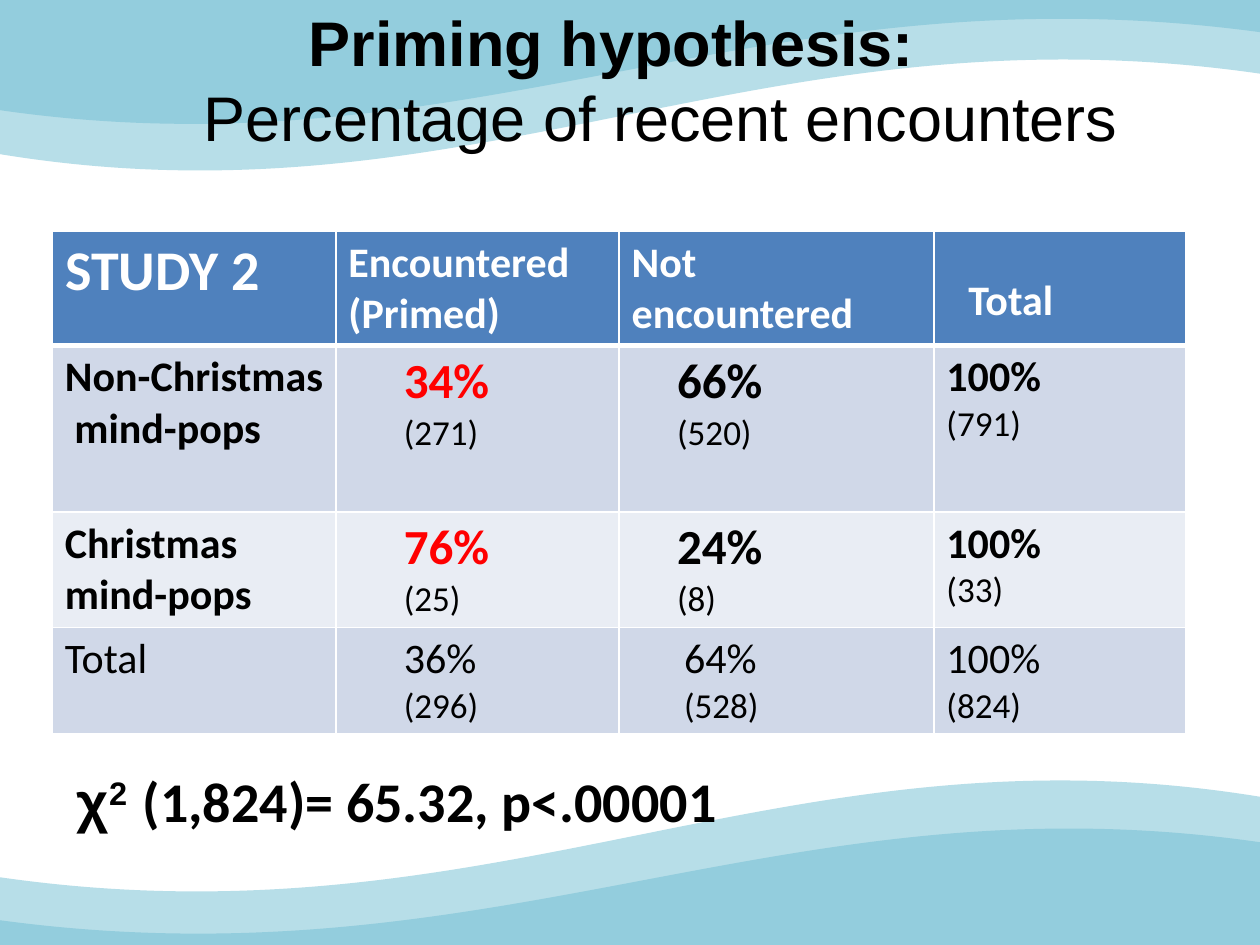
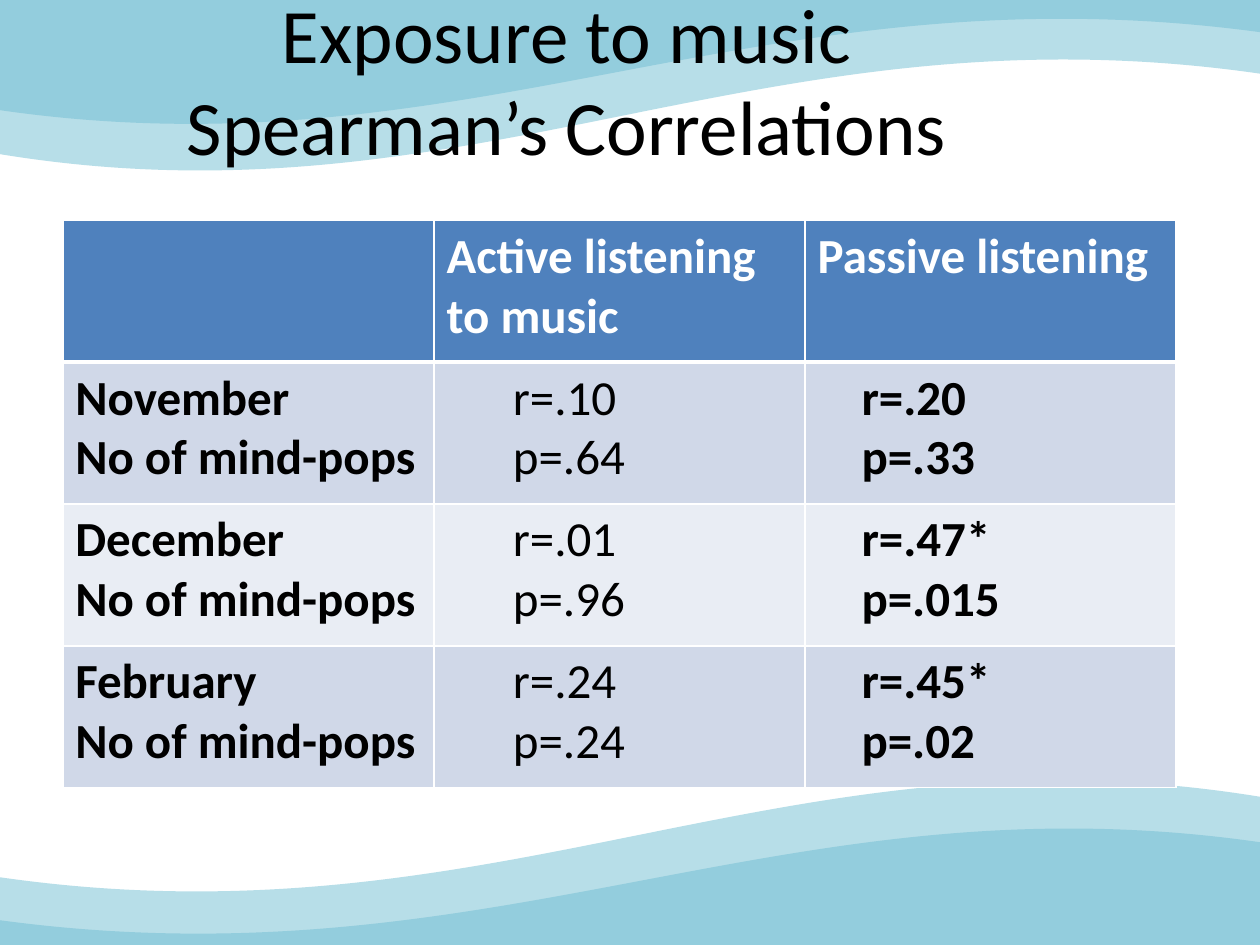
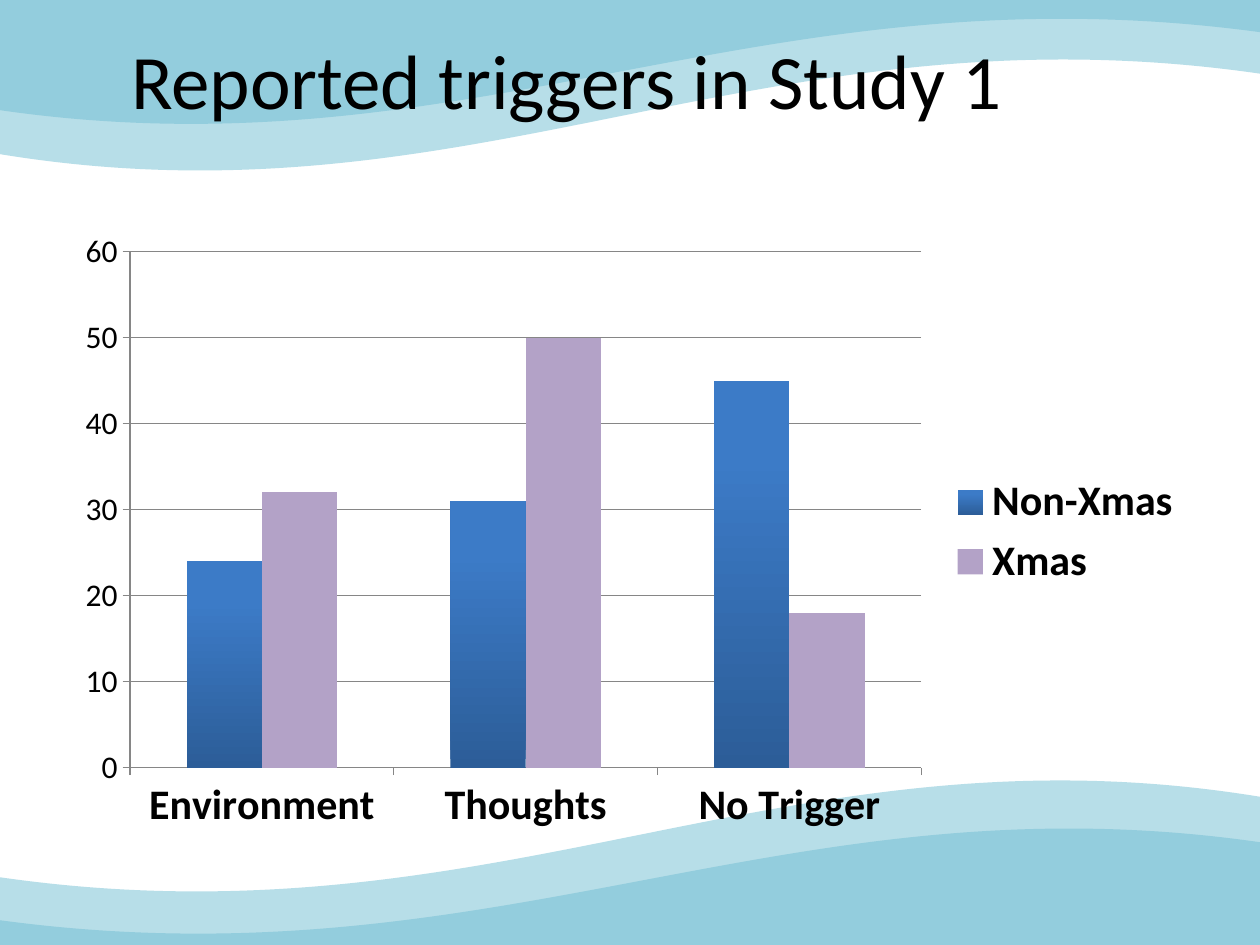
from lxml import etree
from pptx import Presentation
from pptx.chart.data import CategoryChartData
from pptx.dml.color import RGBColor
from pptx.enum.chart import XL_CHART_TYPE, XL_LEGEND_POSITION, XL_TICK_MARK
from pptx.enum.text import MSO_ANCHOR, PP_ALIGN
from pptx.oxml.ns import qn
from pptx.util import Cm, Pt

COLUMNS = XL_CHART_TYPE.COLUMN_CLUSTERED
LEGEND_RIGHT = XL_LEGEND_POSITION.RIGHT
TICK_OUTSIDE = XL_TICK_MARK.OUTSIDE
MIDDLE = MSO_ANCHOR.MIDDLE
CENTER, LEFT = PP_ALIGN.CENTER, PP_ALIGN.LEFT

BLACK = RGBColor(0x00, 0x00, 0x00)
WHITE = RGBColor(0xFF, 0xFF, 0xFF)
RED = RGBColor(0xFF, 0x00, 0x00)
LIGHT_WAVE = RGBColor(0xB7, 0xDE, 0xE8)
DARK_WAVE = RGBColor(0x93, 0xCD, 0xDD)
HEADER_BLUE = RGBColor(0x4F, 0x81, 0xBD)
BANDS = (RGBColor(0xD0, 0xD8, 0xE8), RGBColor(0xE9, 0xED, 0xF4))
BAR_TOP = RGBColor(0x3C, 0x7B, 0xC7)
BAR_BOTTOM = RGBColor(0x2C, 0x5D, 0x98)
BAR_PURPLE = RGBColor(0xB3, 0xA2, 0xC7)
AXIS_GREY = RGBColor(0x86, 0x86, 0x86)

BODY_FONT, TITLE_FONT = "Calibri", "Arial"


def add_run(paragraph, text, size, bold=False, color=BLACK, name=BODY_FONT):
    run = paragraph.add_run()
    run.text = text
    for attribute, value in {"size": Pt(size), "bold": bold, "name": name}.items():
        setattr(run.font, attribute, value)
    run.font.color.rgb = color
    return run


def add_grid(slide, left, top, widths, heights, rows, indents):
    """Add a banded table; each cell is a list of (text, size, bold, colour) lines."""
    table = slide.shapes.add_table(len(rows), len(widths), Cm(left), Cm(top),
                                   Cm(sum(widths)), Cm(sum(heights))).table
    for column, width in zip(table.columns, widths):
        column.width = Cm(width)
    for row_index, (row, height) in enumerate(zip(rows, heights)):
        table.rows[row_index].height = Cm(height)
        for column_index, lines in enumerate(row):
            cell = table.cell(row_index, column_index)
            cell.fill.solid()
            cell.fill.fore_color.rgb = BANDS[(row_index - 1) % 2] if row_index else HEADER_BLUE
            if row_index:
                cell.margin_left = Cm(indents[column_index])
            for line_index, line in enumerate(lines):
                frame = cell.text_frame
                add_run(frame.add_paragraph() if line_index else frame.paragraphs[0], *line)
            borders = {"a:lnL": 1, "a:lnR": 1, "a:lnT": 3 if row_index == 1 else 1,
                       "a:lnB": 1 if row_index else 3}
            properties = cell._tc.get_or_add_tcPr()
            for position, (side, width) in enumerate(borders.items()):
                border = etree.Element(qn(side), w=str(Pt(width)))
                fill = etree.SubElement(border, qn("a:solidFill"))
                etree.SubElement(fill, qn("a:srgbClr"), val=str(WHITE))
                properties.insert(position, border)
    return table


presentation = Presentation()
presentation.slide_width, presentation.slide_height = Cm(25.4), Cm(19.05)
blank_layout = presentation.slide_layouts[6]
priming_slide, music_slide, trigger_slide = [
    presentation.slides.add_slide(blank_layout) for _ in range(3)]

# Waves, in cm: colour, height, top of the turned copy, corners, handles of the S-curve
# that runs from the third corner to the fourth
waves = (
    (LIGHT_WAVE, 3.5, 15.75,
     [(9.1, -0.08), (25.5, 0), (25.5, 1.5), (-0.05, 3.1), (-0.1, -0.03)],
     [(15.32, 0), (9.6, 4.7)]),
    (DARK_WAVE, 2.64, 16.69,
     [(3.94, -0.13), (25.4, -0.03), (25.48, 0.66), (-0.08, 2.21), (-0.08, -0.03)],
     [(15.29, -0.74), (9.58, 3.63)]),
)
for turned in (True, False):
    pair = []
    for color, height, turned_top, corners, handles in waves:
        start, *others = [(Cm(x), Cm(y)) for x, y in corners]
        builder = priming_slide.shapes.build_freeform(*start)
        builder.add_line_segments(others, close=True)
        wave = builder.convert_to_shape()
        outline = next(wave._element.iter(qn("a:path")))
        curve = outline[3]
        curve.tag = qn("a:cubicBezTo")
        for position, (x, y) in enumerate(handles):
            curve.insert(position, etree.Element(
                qn("a:pt"), x=str(Cm(x) - wave.left), y=str(Cm(y) - wave.top)))
        wave.height = Cm(height)
        outline.set("h", str(Cm(height)))
        if turned:
            wave.top, wave.rotation = Cm(turned_top), 180
        wave.shadow.inherit = False
        wave.fill.solid()
        wave.fill.fore_color.rgb = color
        wave.line.fill.background()
        pair.append(wave)
    # Moved to the master, so that every slide shows it
    group = priming_slide.shapes.add_group_shape(pair)
    presentation.slide_master.shapes.element.append(group.element)

# Titles
titles = (
    (priming_slide, -0.02, 25.4, LEFT, 36, TITLE_FONT,
     [("Priming hypothesis:", True), ("Percentage of recent encounters", False)]),
    (music_slide, 0, 22.86, CENTER, 44, BODY_FONT,
     [("Exposure to music", False), ("Spearman’s Correlations", False)]),
    (trigger_slide, 0, 22.86, CENTER, 44, BODY_FONT, [("Reported triggers in Study 1", False)]),
)
title_paragraphs = []
for slide, left, width, alignment, size, font_name, lines in titles:
    frame = slide.shapes.add_textbox(Cm(left), 0, Cm(width), Cm(3.18)).text_frame
    frame.word_wrap = True
    frame.vertical_anchor = MIDDLE
    paragraph = frame.paragraphs[0]
    paragraph.alignment = alignment
    title_paragraphs.append(paragraph)
    for line_index, (text, bold) in enumerate(lines):
        if line_index:
            paragraph.add_line_break()
        add_run(paragraph, text, size, bold, name=font_name)

# Slide 1: recent encounters
encounter_rows = [[
    [("STUDY 2", 32, True, WHITE)],
    [("Encountered (Primed)", 24, True, WHITE)],
    [("Not encountered", 24, True, WHITE)],
    [("Total", 24, True, WHITE)],
]]
for labels, primed, not_primed, total in (
    (["Non-Christmas mind-pops"], ("34%", "(271)"), ("66%", "(520)"), ("100%", "(791)")),
    (["Christmas", "mind-pops"], ("76%", "(25)"), ("24%", "(8)"), ("100%", "(33)")),
    (["Total"], ("36%", "(296)"), ("64%", "(528)"), ("100%", "(824)")),
):
    is_group = labels != ["Total"]
    share_size = 28 if is_group else 24
    row = [[(label, 24, is_group) for label in labels]]
    for (share, count), size, color in (
        (primed, share_size, RED if is_group else BLACK),
        (not_primed, share_size, BLACK),
        (total, 24, BLACK),
    ):
        row.append([(share, size, is_group, color), (count, 20)])
    encounter_rows.append(row)
encounter_table = add_grid(priming_slide, 1.06, 4.66, (5.71, 5.71, 6.35, 5.08),
                           (2.31, 3.35, 2.33, 2.15), encounter_rows, (0.25, 1.37, 1.17, 0.25))
total_header = encounter_table.cell(0, 3)
total_header.margin_left, total_header.margin_top = Cm(0.69), Cm(0.89)
encounter_table.cell(3, 2).margin_left = Cm(1.31)

# Left margin of all lines and extra indent of the first, in cm
for paragraph, margin, first_line in (
    (title_paragraphs[0], 3.88, 2.12),
    (encounter_table.cell(1, 0).text_frame.paragraphs[0], 0.19, -0.19),
):
    properties = paragraph._p.get_or_add_pPr()
    properties.set("marL", str(Cm(margin)))
    properties.set("indent", str(Cm(first_line)))

result_box = priming_slide.shapes.add_textbox(Cm(1.3), Cm(15.32), Cm(18.29), Cm(1.62))
result_box.text_frame.word_wrap = True
result = result_box.text_frame.paragraphs[0]
add_run(result, "χ", 32, True, name=TITLE_FONT)
exponent = add_run(result, "2", 32, True, name=TITLE_FONT)
exponent.font._element.set("baseline", "30000")
add_run(result, " ", 32, True, name=TITLE_FONT)
add_run(result, "(1,824)= 65.32, p<.00001", 32, True)

# Slide 2: correlations
correlation_rows = [[[]] + [[(header, 28, True, WHITE)]
                            for header in ("Active listening to music", "Passive listening")]]
for month, active, passive in (
    ("November", ("r=.10", "p=.64"), ("r=.20", "p=.33")),
    ("December", ("r=.01", "p=.96"), ("r=.47*", "p=.015")),
    ("February", ("r=.24", "p=.24"), ("r=.45*", "p=.02")),
):
    correlation_rows.append([[(text, 28, bold) for text in texts] for texts, bold in (
        ((month, "No of mind-pops"), True), (active, False), (passive, True))])
add_grid(music_slide, 1.27, 4.44, [7.48] * 3, [2.86] * 4, correlation_rows, (0.25, 1.59, 1.14))

# Slide 3: triggers
chart_data = CategoryChartData()
chart_data.categories = ["Environment", "Thoughts", "No Trigger"]
chart_data.add_series("Non-Xmas", (24, 31, 45))
chart_data.add_series("Xmas", (32, 50, 18))
chart = trigger_slide.shapes.add_chart(COLUMNS, Cm(1.27), Cm(4.44), Cm(22.86), Cm(12.57),
                                       chart_data).chart
chart.has_title = False
chart.has_legend = True
chart.legend.position = LEGEND_RIGHT
chart.legend.include_in_layout = False
category_axis, value_axis = chart.category_axis, chart.value_axis
for font, size, bold in (
    (chart.font, 18, False),
    (value_axis.tick_labels.font, 18, False),
    (category_axis.tick_labels.font, 24, True),
    (chart.legend.font, 24, True),
):
    for attribute, value in {"size": Pt(size), "bold": bold, "name": BODY_FONT}.items():
        setattr(font, attribute, value)
    font.color.rgb = BLACK
for attribute, value in {"minimum_scale": 0, "maximum_scale": 60, "major_unit": 10,
                         "has_major_gridlines": True}.items():
    setattr(value_axis, attribute, value)
for axis in (category_axis, value_axis):
    axis.major_tick_mark = TICK_OUTSIDE
for part in (category_axis, value_axis, value_axis.major_gridlines):
    part.format.line.color.rgb = AXIS_GREY
    part.format.line.width = Pt(0.75)

plot = chart.plots[0]
plot.vary_by_categories = False
plot.gap_width, plot.overlap = 150, 0
everyday_series, christmas_series = plot.series
gradient = everyday_series.format.fill
gradient.gradient()
gradient.gradient_angle = 90
for stop, position, color in zip(gradient.gradient_stops, (0, 0.8), (BAR_BOTTOM, BAR_TOP)):
    stop.position = position
    stop.color.rgb = color
christmas_series.format.fill.solid()
christmas_series.format.fill.fore_color.rgb = BAR_PURPLE

presentation.save("out.pptx")
